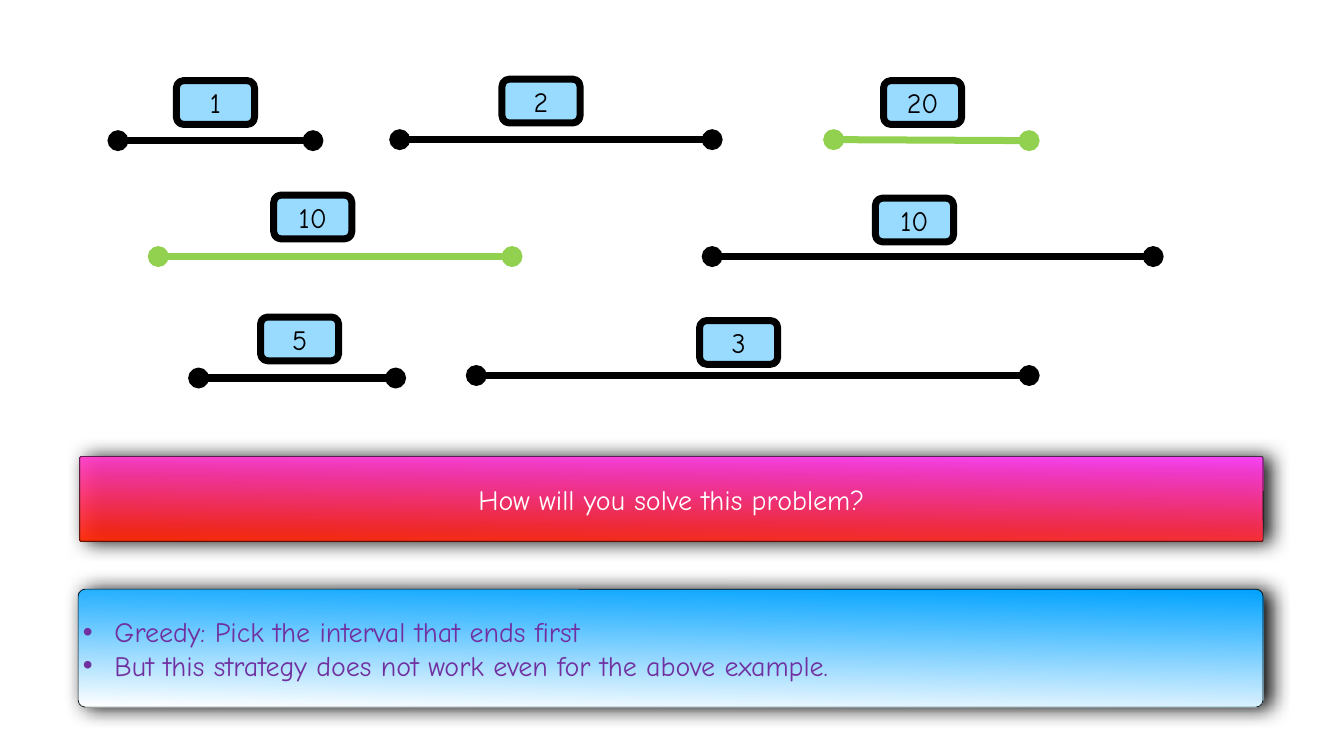
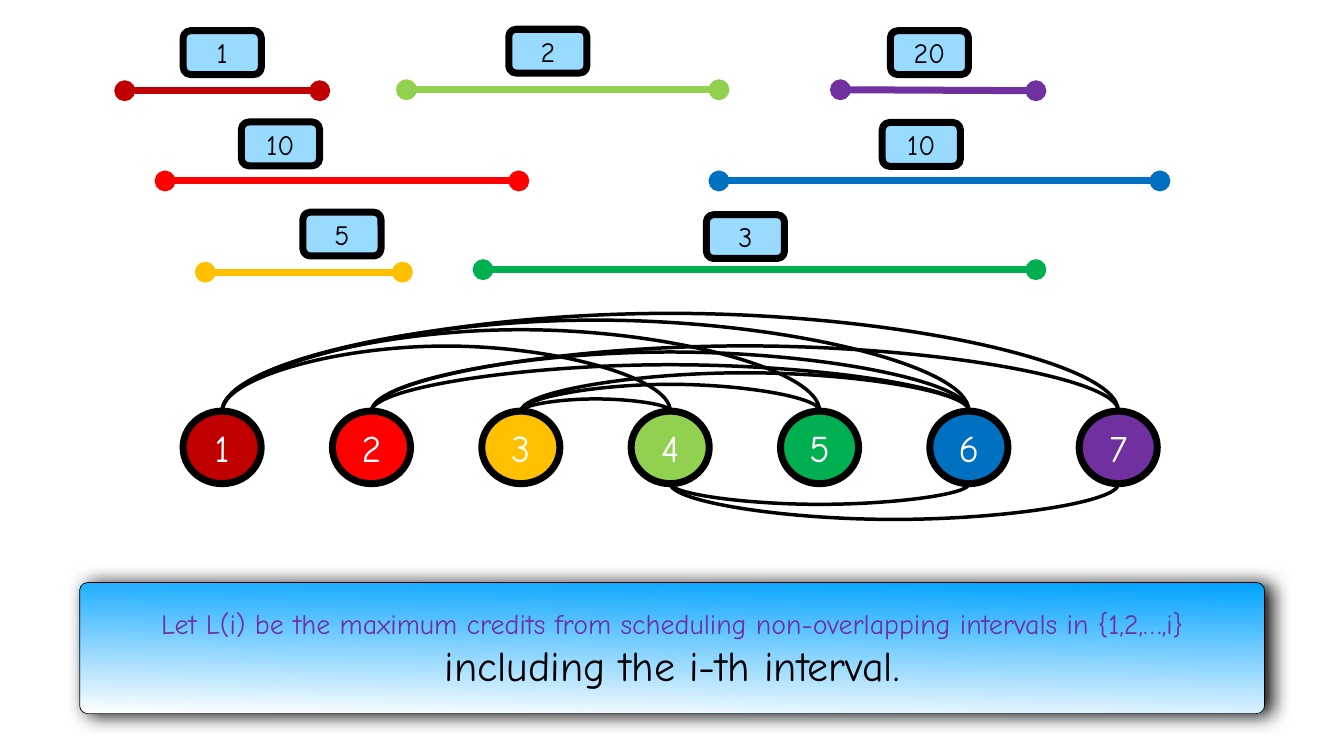
from dataclasses import dataclass, field
from typing import NamedTuple

from lxml import etree
from pptx import Presentation
from pptx import util as u
from pptx.dml import color as dml
from pptx.enum import shapes, text
from pptx.oxml import ns
from pptx.shapes import autoshape, connector
from pptx.slide import Slide

FONT = "Comic Neue"
BLACK, WHITE, PURPLE, LIME = "000000", "FFFFFF", "7030A0", "92D050"
BOX_FILL = "99DAFF"
SKY = ("00A2FF", WHITE)
SUNSET = ("FF40FF", "FF2600")
INTERVAL_COLOURS = ["C00000", "FF0000", "FFC000", LIME, "00B050", "0070C0", PURPLE]
GREEDY_COLOURS = [BLACK, LIME, BLACK, BLACK, BLACK, BLACK, LIME]
THICK, CURVE_WIDTH, HAIRLINE = 10, 5, 1
MARGIN, BULLET_INDENT = 4, 45
BODY_SIZE, NODE_SIZE, LARGE_SIZE = 40, 54, 60
CREDIT_WIDTH, CREDIT_HEIGHT = 111.6, 62.6
NODE_LEFT, NODE_TOP, NODE_PITCH = 261.5, 587.3, 213.36
NODE_WIDTH, NODE_HEIGHT = 111.6, 103.7
CURVE_BASE = 1
ELLIPSE_TOP, ELLIPSE_BOTTOM = 0, 4


class Area(NamedTuple):
    left: float
    top: float
    width: float
    height: float


class Span(NamedTuple):
    words: str
    size: float = BODY_SIZE
    colour: str = PURPLE


class Interval(NamedTuple):
    credit: int
    row: int
    start: float
    end: float
    credit_left: float
    credit_rise: float
    start_rise: float = 0
    end_rise: float = 0


class Arc(NamedTuple):
    first: int
    last: int
    depth: float
    above: bool = True


@dataclass(frozen=True)
class Timeline:
    rows: list[float]
    colours: list[str]
    shift: float = 0
    nudges: dict[int, tuple[float, float]] = field(default_factory=dict)


@dataclass(frozen=True)
class Panel:
    area: Area
    gradient: tuple[str, str]
    paras: list[list[Span]]
    corner: float = 0.06
    bulleted: bool = False
    opacity: int = 100


INTERVALS = [
    Interval(1, 0, 168.5, 447.1, 252, 85.7),
    Interval(10, 1, 226.1, 731.5, 391, 87.8),
    Interval(5, 2, 283.7, 565.2, 372.2, 87.1),
    Interval(2, 0, 571, 1017.4, 717.1, 87.8, 1.4, 1.4),
    Interval(3, 2, 680.4, 1470.2, 999.4, 82.1, 3.6, 3.6),
    Interval(10, 1, 1017.4, 1647.4, 1250.6, 83.5),
    Interval(20, 0, 1190.9, 1470.2, 1262.2, 85.7, 1.4),
]
GREEDY_TIMELINE = Timeline([200.9, 366.5, 540], GREEDY_COLOURS)
GRAPH_TIMELINE = Timeline(
    [129.6, 258.5, 388.8],
    INTERVAL_COLOURS,
    9.7,
    {1: (-55.8, 3.6), 2: (50.8, 1.4)},
)
ARCS = [
    Arc(1, 4, 94.15),
    Arc(1, 5, 117.69),
    Arc(1, 6, 131.54),
    Arc(1, 7, 141.23),
    Arc(2, 6, 85.61),
    Arc(2, 7, 94.39),
    Arc(3, 4, 18),
    Arc(3, 5, 39.05),
    Arc(3, 6, 55.66),
    Arc(4, 6, 30.23, above=False),
    Arc(4, 7, 51.96, above=False),
    Arc(2, 6, 67.26),
]
QUESTION = Panel(
    Area(113.8, 652.3, 1690.6, 121),
    SUNSET,
    [[Span("How will you solve this problem?", colour=WHITE)]],
    corner=0.02,
    opacity=93,
)
GREEDY_NOTE = Panel(
    Area(111.6, 841.7, 1692.7, 168.5),
    SKY,
    [
        [Span("Greedy: Pick the interval that ends first")],
        [Span("But this strategy does not work even for the above example.")],
    ],
    bulleted=True,
)
DEFINITION = Panel(
    Area(113.8, 832.3, 1692.7, 187.2),
    SKY,
    [[
        Span("Let L(i) be the maximum credits from scheduling "
             "non-overlapping intervals in {1,2,…,i} "),
        Span("including the i-th interval.", LARGE_SIZE, BLACK),
    ]],
)


def rgb(value: str) -> dml.RGBColor:
    return dml.RGBColor.from_string(value)


def add_xml(parent: etree._Element, tag: str, **attributes: object) -> etree._Element:
    values = {name: str(value) for name, value in attributes.items()}
    return etree.SubElement(parent, ns.qn(tag), values)


def style_line(item: autoshape.Shape | connector.Connector, colour: str, width: float) -> None:
    item.line.color.rgb = rgb(colour)
    item.line.width = u.Pt(width)


def add_box(page: Slide, kind: shapes.MSO_SHAPE, area: Area, line_width: float) -> autoshape.Shape:
    box = page.shapes.add_shape(kind, *map(u.Pt, area))
    box.shadow.inherit = False
    style_line(box, BLACK, line_width)
    return box


def write(box: autoshape.Shape, paras: list[list[Span]], bulleted: bool = False) -> None:
    frame = box.text_frame
    frame.word_wrap = True
    frame.vertical_anchor = text.MSO_ANCHOR.MIDDLE
    frame.margin_left = frame.margin_right = u.Pt(MARGIN)
    frame.margin_top = frame.margin_bottom = u.Pt(MARGIN)
    for index, spans in enumerate(paras):
        para = frame.add_paragraph() if index else frame.paragraphs[0]
        para.alignment = text.PP_ALIGN.LEFT if bulleted else text.PP_ALIGN.CENTER
        if bulleted:
            settings = para._p.get_or_add_pPr()
            settings.set("marL", str(u.Pt(BULLET_INDENT)))
            settings.set("indent", str(-u.Pt(BULLET_INDENT)))
            add_xml(settings, "a:buFont", typeface="Arial")
            add_xml(settings, "a:buChar", char="•")
        for span in spans:
            run = para.add_run()
            run.text = span.words
            run.font.name = FONT
            run.font.size = u.Pt(span.size)
            run.font.color.rgb = rgb(span.colour)


def add_label(page: Slide, kind: shapes.MSO_SHAPE, area: Area, fill: str, span: Span) -> autoshape.Shape:
    box = add_box(page, kind, area, THICK)
    box.fill.solid()
    box.fill.fore_color.rgb = rgb(fill)
    write(box, [[span]])
    box.text_frame.auto_size = text.MSO_AUTO_SIZE.SHAPE_TO_FIT_TEXT
    return box


def add_panel(page: Slide, panel: Panel) -> None:
    box = add_box(page, shapes.MSO_SHAPE.ROUNDED_RECTANGLE, panel.area, HAIRLINE)
    box.adjustments[0] = panel.corner
    box.fill.gradient()
    box.fill.gradient_angle = 269
    for stop, colour in zip(box.fill.gradient_stops, panel.gradient):
        stop.color.rgb = rgb(colour)
    properties = box._element.spPr
    if panel.opacity < 100:
        for colour in list(properties.iter(ns.qn("a:srgbClr"))):
            add_xml(colour, "a:alpha", val=panel.opacity * 1000)
    shadow = add_xml(properties.find(ns.qn("a:effectLst")), "a:outerShdw",
                     blurRad=u.Pt(28), dist=u.Pt(9), dir=0, rotWithShape=0)
    add_xml(add_xml(shadow, "a:srgbClr", val=BLACK), "a:alpha", val=97000)
    write(box, panel.paras, panel.bulleted)


def add_timeline(page: Slide, timeline: Timeline) -> None:
    for interval, colour in zip(INTERVALS, timeline.colours):
        row = timeline.rows[interval.row]
        line = page.shapes.add_connector(
            shapes.MSO_CONNECTOR.STRAIGHT,
            u.Pt(interval.start + timeline.shift), u.Pt(row - interval.start_rise),
            u.Pt(interval.end + timeline.shift), u.Pt(row - interval.end_rise),
        )
        style_line(line, colour, THICK)
        for end in ("a:headEnd", "a:tailEnd"):
            add_xml(line.line._get_or_add_ln(), end, type="oval")
        add_xml(line._element.spPr, "a:effectLst")
    for index, interval in enumerate(INTERVALS):
        across, down = timeline.nudges.get(index, (0, 0))
        area = Area(
            interval.credit_left + timeline.shift + across,
            timeline.rows[interval.row] - interval.credit_rise + down,
            CREDIT_WIDTH, CREDIT_HEIGHT,
        )
        add_label(page, shapes.MSO_SHAPE.ROUNDED_RECTANGLE, area, BOX_FILL,
                  Span(str(interval.credit), colour=BLACK))


def add_arc(page: Slide, arc: Arc, nodes: list[autoshape.Shape]) -> None:
    first, last = nodes[arc.first - 1], nodes[arc.last - 1]
    curve = page.shapes.add_connector(shapes.MSO_CONNECTOR.CURVE, 0, 0, 0, 0)
    curve.begin_connect(first, 0)
    curve.end_connect(last, 0)
    ends = curve._element.nvCxnSpPr.cNvCxnSpPr
    for end in (ends.stCxn, ends.endCxn):
        end.set("idx", str(ELLIPSE_TOP if arc.above else ELLIPSE_BOTTOM))

    reach = (arc.last - arc.first) * NODE_PITCH
    middle = NODE_LEFT + NODE_WIDTH / 2 + (arc.first + arc.last - 2) / 2 * NODE_PITCH
    edge = NODE_TOP if arc.above else NODE_TOP + NODE_HEIGHT
    curve.left, curve.top = u.Pt(middle - CURVE_BASE / 2), u.Pt(edge - reach / 2)
    curve.width, curve.height = u.Pt(CURVE_BASE), u.Pt(reach)
    transform = curve._element.spPr.xfrm
    transform.rot = 90 if arc.above else 270
    transform.flipH, transform.flipV = True, arc.above

    guides = curve._element.spPr.prstGeom.get_or_add_avLst()
    bend = round(arc.depth / CURVE_BASE * 100000)
    add_xml(guides, "a:gd", name="adj1", fmla=f"val {bend}")
    style_line(curve, BLACK, CURVE_WIDTH)
    add_xml(curve._element.spPr, "a:effectLst")


def add_graph(page: Slide) -> None:
    nodes = [
        add_label(
            page, shapes.MSO_SHAPE.OVAL,
            Area(NODE_LEFT + index * NODE_PITCH, NODE_TOP, NODE_WIDTH, NODE_HEIGHT),
            colour, Span(str(index + 1), NODE_SIZE, WHITE),
        )
        for index, colour in enumerate(INTERVAL_COLOURS)
    ]
    for arc in ARCS:
        add_arc(page, arc, nodes)


def main() -> None:
    deck = Presentation()
    deck.slide_width, deck.slide_height = u.Pt(1920), u.Pt(1080)
    blank = deck.slide_layouts[6]

    greedy = deck.slides.add_slide(blank)
    add_timeline(greedy, GREEDY_TIMELINE)
    add_panel(greedy, QUESTION)
    add_panel(greedy, GREEDY_NOTE)

    graph = deck.slides.add_slide(blank)
    add_timeline(graph, GRAPH_TIMELINE)
    add_graph(graph)
    add_panel(graph, DEFINITION)

    deck.save("out.pptx")


if __name__ == "__main__":
    main()
